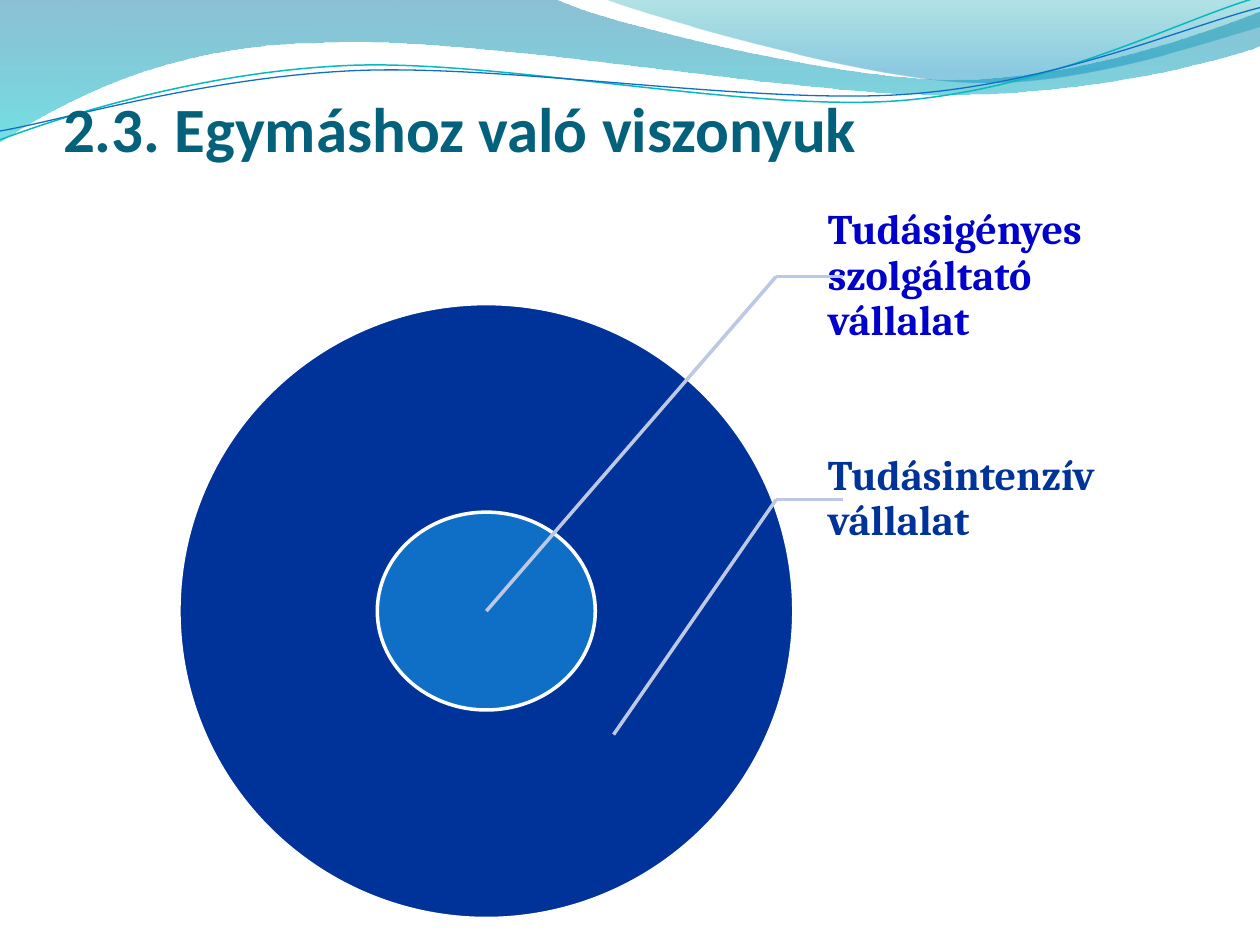
from math import cos, radians, sin

from lxml.etree import SubElement
from pptx import Presentation
from pptx.dml.color import RGBColor
from pptx.enum.shapes import MSO_CONNECTOR, MSO_SHAPE
from pptx.enum.text import MSO_ANCHOR, MSO_AUTO_SIZE, PP_ALIGN
from pptx.oxml.ns import qn
from pptx.util import Inches, Pt

COLORS = {
    "title": "04617B", "outer": "003399", "inner": "0F6FC6", "outline": "FFFFFF",
    "service": "0000CC", "leader": "BDC8E5", "teal_line": "0AB8BF",
    "wave_top": "0074A1", "wave_bottom": "00C6CF",
    "crest_top": "00A1A9", "crest_bottom": "008BBF",
}
CURVE_TILT = -2.7

# A path starts with its first point; each further segment is
# one end point (straight) or three points (cubic curve).
WAVE = [
    [(0, -0.01)],
    [(4.4, -0.01)],
    [(4.76, 0.17), (6.64, 0.63), (7.58, 0.63)],
    [(8.53, 0.63), (9.58, 0.26), (10, 0.09)],
    [(10.01, 0.36)],
    [(9.83, 0.44), (8.7, 0.76), (7.46, 0.75)],
    [(6.22, 0.75), (3.82, 0.28), (2.57, 0.34)],
    [(1.29, 0.35), (0.46, 0.83), (-0.01, 1.13)],
]
CREST = [
    [(4.79, -0.01)],
    [(5.09, 0.11), (6.82, 0.62), (7.69, 0.65)],
    [(8.56, 0.69), (9.61, 0.32), (10, 0.21)],
    [(10, 0)],
]
TEAL_CURVE = [
    [(0, 1.11)],
    [(0.48, 0.93), (1.58, 0.57), (2.77, 0.52)],
    [(3.95, 0.47), (5.93, 0.89), (7.13, 0.8)],
    [(8.33, 0.71), (9.38, 0.15), (9.98, -0.02)],
]
BLUE_CURVE = [
    [(0, 1.04)],
    [(0.47, 0.96), (1.64, 0.61), (2.83, 0.56)],
    [(4.03, 0.51), (5.97, 0.83), (7.17, 0.75)],
    [(8.36, 0.67), (9.41, 0.21), (10, 0.06)],
]


def rgb(name):
    return RGBColor.from_string(COLORS[name])


def set_line(shape, color, width):
    shape.line.color.rgb = rgb(color)
    shape.line.width = Pt(width)


def to_local(point, box, tilt):
    """Turn a slide point into a point of a box that is tilted about its centre."""
    left, top, width, height = box
    dx, dy = point[0] - left - width / 2, point[1] - top - height / 2
    angle = radians(-tilt)
    return (Inches(dx * cos(angle) - dy * sin(angle) + width / 2),
            Inches(dx * sin(angle) + dy * cos(angle) + height / 2))


def add_outline(slide, box, segments, close, tilt=0):
    """Add a freeform whose three-point segments are true cubic curves."""
    local = [[to_local(point, box, tilt) for point in segment] for segment in segments]
    builder = slide.shapes.build_freeform(*local[0][0], scale=1.0)
    builder.add_line_segments([segment[-1] for segment in local[1:]], close=close)
    outline = builder.convert_to_shape()
    outline.left, outline.top, outline.width, outline.height = map(Inches, box)
    outline.rotation = tilt
    outline.shadow.inherit = False

    path = next(outline._element.iter(qn("a:path")))
    path.set("w", str(outline.width))
    path.set("h", str(outline.height))
    for node, segment in zip(list(path), local):
        for point in list(node):
            node.remove(point)
        if len(segment) == 3:
            curve = SubElement(path, qn("a:cubicBezTo"))
            path.replace(node, curve)
            node = curve
        for x, y in segment:
            SubElement(node, qn("a:pt"), x=str(x), y=str(y))
    return outline


def add_band(slide, box, segments, stops):
    """Add a closed wave with a downward gradient of (position, colour, opacity) stops."""
    band = add_outline(slide, box, segments, close=True)
    band.line.fill.background()
    band.fill.gradient()
    band.fill.gradient_angle = 270
    for stop, (position, color, _) in zip(band.fill.gradient_stops, stops):
        stop.position = position
        stop.color.rgb = rgb(color)
    for node, (_, _, opacity) in zip(band._element.spPr.iter(qn("a:srgbClr")), stops):
        SubElement(node, qn("a:alpha"), val=str(opacity * 1000))


def add_curve(slide, box, segments, color, width):
    curve = add_outline(slide, box, segments, close=False, tilt=CURVE_TILT)
    curve.fill.background()
    set_line(curve, color, width)


def add_waves(slide):
    add_band(slide, (-0.01, -0.01, 10.02, 1.14), WAVE,
             [(0, "wave_top", 45), (1, "wave_bottom", 55)])
    add_band(slide, (4.79, -0.01, 5.21, 0.7), CREST,
             [(0, "crest_top", 30), (0.8, "crest_bottom", 45)])
    add_curve(slide, (-0.02, 0.22, 10.02, 0.71), TEAL_CURVE, "teal_line", 0.85)
    add_curve(slide, (-0.02, 0.3, 10.03, 0.58), BLUE_CURVE, "inner", 0.75)


def format_text(frame, text, font, size, color, anchor, margins):
    frame.text = text
    frame.word_wrap = True
    frame.auto_size = MSO_AUTO_SIZE.NONE
    frame.vertical_anchor = anchor
    (frame.margin_left, frame.margin_top,
     frame.margin_right, frame.margin_bottom) = map(Inches, margins)
    paragraph = frame.paragraphs[0]
    paragraph.alignment = PP_ALIGN.LEFT
    run_font = paragraph.runs[0].font
    run_font.name, run_font.size, run_font.bold = font, Pt(size), True
    run_font.color.rgb = rgb(color)


def add_title(slide, text):
    title = slide.shapes.title
    title.left, title.top = Inches(0.5), Inches(0.77)
    title.width, title.height = Inches(9), Inches(0.54)
    format_text(title.text_frame, text, "Calibri", 36, "title",
                MSO_ANCHOR.BOTTOM, (0, 0.05, 0, 0))
    slide.shapes._spTree.append(title._element)  # in front of the waves


def add_ellipse(slide, center, width, height, color):
    x, y = center
    ellipse = slide.shapes.add_shape(
        MSO_SHAPE.OVAL, Inches(x - width / 2), Inches(y - height / 2),
        Inches(width), Inches(height))
    ellipse.shadow.inherit = False
    ellipse.fill.solid()
    ellipse.fill.fore_color.rgb = rgb(color)
    set_line(ellipse, "outline", 2)


def add_leader(slide, start, end):
    leader = slide.shapes.add_connector(
        MSO_CONNECTOR.STRAIGHT, *map(Inches, (*start, *end)))
    set_line(leader, "leader", 2)
    SubElement(leader._element.spPr, qn("a:effectLst"))


def add_callout(slide, text, color, top, target):
    """Add a label with a bent leader line running to its target."""
    height = 1.77
    label = slide.shapes.add_textbox(
        Inches(6.38), Inches(top), Inches(2.76), Inches(height))
    format_text(label.text_frame, text, "Cambria", 24, color,
                MSO_ANCHOR.MIDDLE, (0.19, 0.03, 0.03, 0.03))
    label.text_frame.paragraphs[0].line_spacing = 0.9
    bend = (6.16, top + height / 2)
    add_leader(slide, bend, (6.69, bend[1]))
    add_leader(slide, bend, target)


def main():
    presentation = Presentation()
    presentation.slide_width, presentation.slide_height = Inches(10), Inches(7.5)
    slide = presentation.slides.add_slide(presentation.slide_layouts[5])
    add_waves(slide)
    add_title(slide, "2.3. Egymáshoz való viszonyuk")
    center = (3.86, 4.85)
    add_ellipse(slide, center, 4.88, 4.88, "outer")
    add_ellipse(slide, center, 1.73, 1.57, "inner")
    add_callout(slide, "Tudásigényes szolgáltató vállalat", "service", 1.31, center)
    add_callout(slide, "Tudásintenzív vállalat", "outer", 3.08, (4.87, 5.83))
    presentation.save("out.pptx")


if __name__ == "__main__":
    main()
